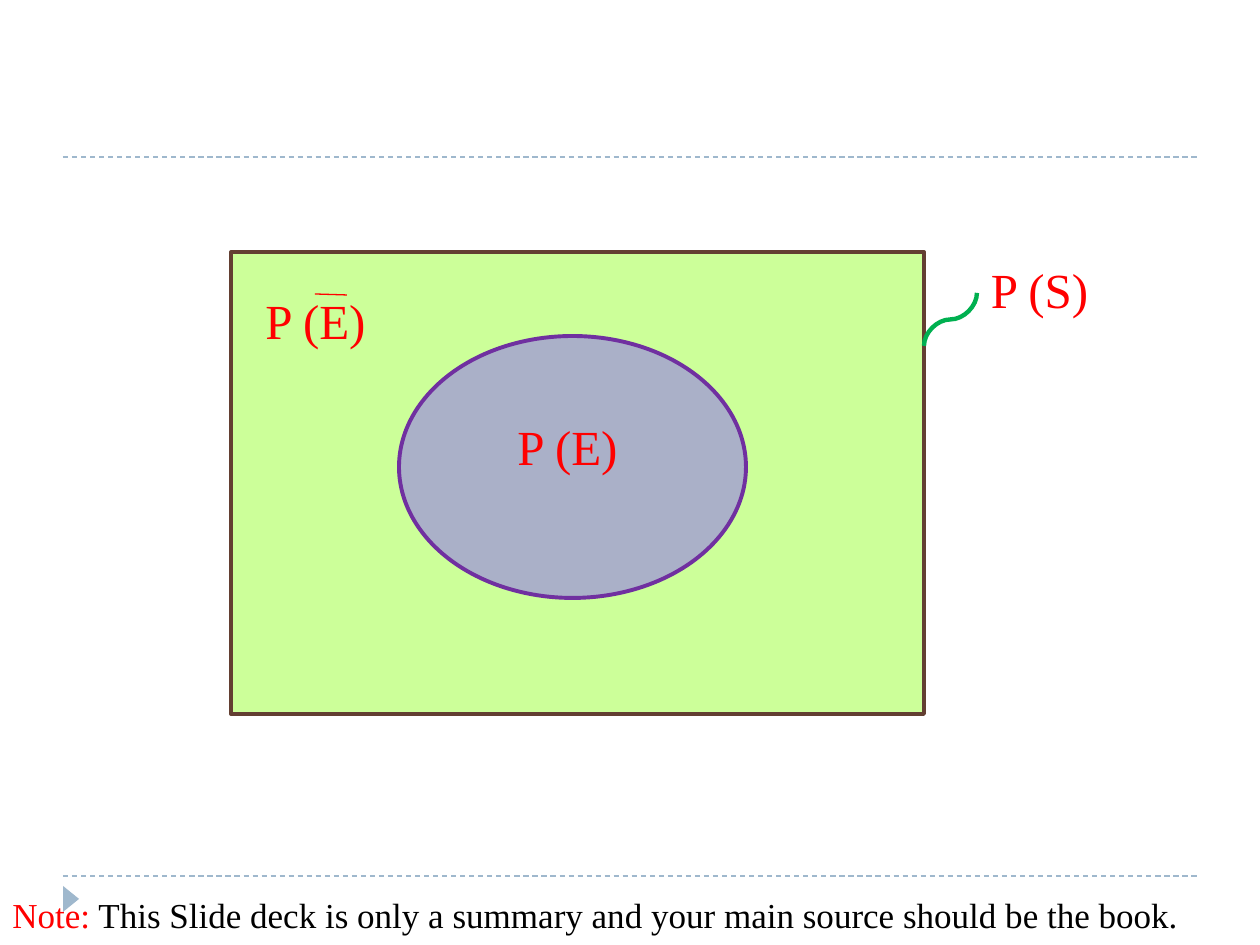
from dataclasses import dataclass

from lxml import etree
from pptx import Presentation
from pptx.dml.color import RGBColor
from pptx.enum.dml import MSO_LINE
from pptx.enum.shapes import MSO_CONNECTOR, MSO_SHAPE
from pptx.enum.text import MSO_ANCHOR, MSO_AUTO_SIZE, PP_ALIGN
from pptx.oxml.ns import qn
from pptx.util import Emu, Pt

PX = 914400 // 126
FONT = "Times New Roman"
RED, MIST = "FF0000", "9FB8CD"


@dataclass
class Box:
    x: int
    y: int
    w: int
    h: int

    def emu(self) -> list[Emu]:
        return [px(v) for v in (self.x, self.y, self.w, self.h)]


@dataclass
class Region:
    kind: MSO_SHAPE
    box: Box
    fill: str
    line: str | None = None
    rotation: int = 0


@dataclass
class Label:
    text: str
    x: int
    y: int


def px(v: int) -> Emu:
    return Emu(v * PX)


def rgb(color: str) -> RGBColor:
    return RGBColor.from_string(color)


def add_region(shapes, region: Region) -> None:
    sp = shapes.add_shape(region.kind, *region.box.emu())
    sp.shadow.inherit = False
    sp.rotation = region.rotation
    sp.fill.solid()
    sp.fill.fore_color.rgb = rgb(region.fill)
    if region.line:
        sp.line.color.rgb = rgb(region.line)
        sp.line.width = Pt(2.25)
    else:
        sp.line.fill.background()


def add_line(shapes, start: tuple[int, int], end: tuple[int, int], color: str,
             width: float = 0.75, kind=MSO_CONNECTOR.STRAIGHT):
    c = shapes.add_connector(kind, *map(px, start + end))
    c.line.color.rgb = rgb(color)
    c.line.width = Pt(width)
    etree.SubElement(c._element.spPr, qn("a:effectLst"))
    return c


def add_label(shapes, label: Label) -> None:
    tf = shapes.add_textbox(*Box(label.x, label.y, 147, 116).emu()).text_frame
    tf.word_wrap = True
    tf.vertical_anchor = MSO_ANCHOR.MIDDLE
    p = tf.paragraphs[0]
    p.text = label.text
    p.alignment = PP_ALIGN.CENTER
    p.font.name, p.font.size = FONT, Pt(28)
    p.font.color.rgb = rgb(RED)


def add_note(shapes, box: Box, parts: list[tuple[str, str]]) -> None:
    tf = shapes.add_textbox(*box.emu()).text_frame
    tf.word_wrap = True
    tf.auto_size = MSO_AUTO_SIZE.SHAPE_TO_FIT_TEXT
    p = tf.paragraphs[0]
    p.font.name, p.font.size = FONT, Pt(20)
    for text, color in parts:
        r = p.add_run()
        r.text = text
        r.font.color.rgb = rgb(color)


def main() -> None:
    prs = Presentation()
    prs.slide_width, prs.slide_height = px(1260), px(945)
    s = prs.slides.add_slide(prs.slide_layouts[6])
    shapes = s.shapes

    for y in (876, 157):
        add_line(shapes, (63, y), (1197, y), MIST).line.dash_style = MSO_LINE.DASH

    for region in (
        Region(MSO_SHAPE.ISOSCELES_TRIANGLE, Box(58, 891, 26, 16), MIST, rotation=90),
        Region(MSO_SHAPE.RECTANGLE, Box(231, 252, 693, 462), "CCFF99", "633F32"),
        Region(MSO_SHAPE.OVAL, Box(399, 336, 347, 262), "AAB0C8", "7030A0"),
    ):
        add_region(shapes, region)

    add_label(shapes, Label("P (E)", 494, 388))
    complement = shapes.add_group_shape().shapes
    add_label(complement, Label("P (E)", 242, 262))
    add_line(complement, (315, 294), (347, 295), RED)

    # The quarter turn makes the curve leave the rectangle's edge vertically.
    curve = add_line(shapes, (977, 346), (924, 293), "00B050", 2.5, MSO_CONNECTOR.CURVE)
    curve._element.spPr.find(qn("a:xfrm")).set("rot", str(90 * 60000))
    add_label(shapes, Label("P (S)", 966, 231))

    add_note(shapes, Box(0, 887, 1229, 55), [
        ("Note:", RED),
        (" This Slide deck is only a summary and your main source should be the book.",
         "000000"),
    ])
    prs.save("out.pptx")


if __name__ == "__main__":
    main()
